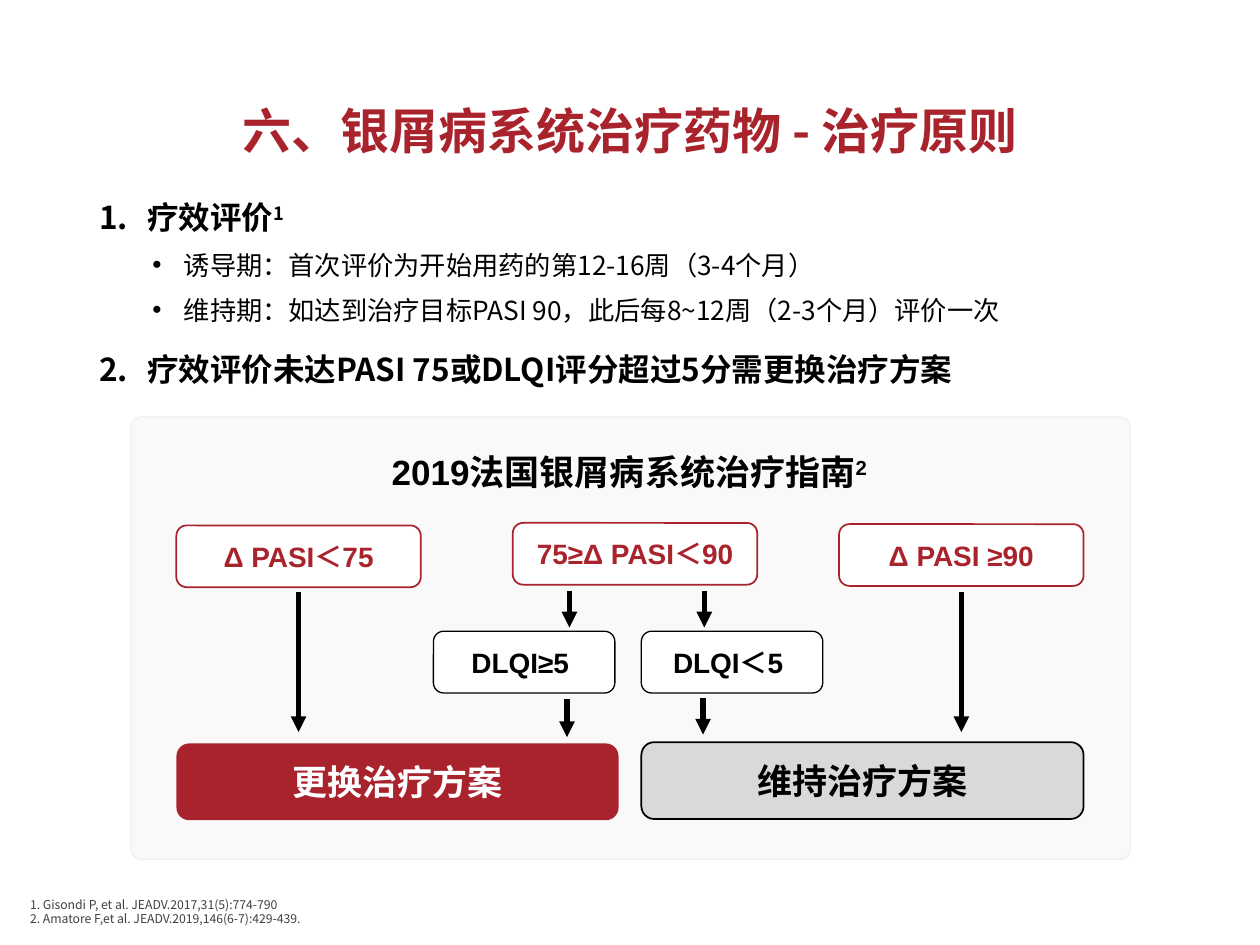
from dataclasses import dataclass
from typing import Optional

from lxml import etree
from pptx import Presentation
from pptx.dml.color import RGBColor
from pptx.enum.shapes import MSO_CONNECTOR, MSO_SHAPE
from pptx.enum.text import MSO_ANCHOR, PP_ALIGN
from pptx.oxml.ns import qn
from pptx.util import Inches, Pt

ROUNDED = MSO_SHAPE.ROUNDED_RECTANGLE
STRAIGHT = MSO_CONNECTOR.STRAIGHT
TOP, MIDDLE, BOTTOM = MSO_ANCHOR.TOP, MSO_ANCHOR.MIDDLE, MSO_ANCHOR.BOTTOM
LEFT, CENTER = PP_ALIGN.LEFT, PP_ALIGN.CENTER

COLORS = {
    "red": "A9232D", "black": "000000", "white": "FFFFFF", "panel": "F9F9F9",
    "panel_edge": "F2F2F2", "grey": "D9D9D9", "reference": "404040",
}
SANS = "Noto Sans CJK SC"
ARIAL = "Arial"

WIDTH, HEIGHT = Inches(10), Inches(7.5)
COLUMNS, ROWS = 100, 75


@dataclass
class Area:
    column: float
    row: float
    columns: float
    rows: float


@dataclass
class Style:
    size: float
    color: str = "black"
    bold: bool = True
    latin: str = ARIAL


@dataclass
class Line:
    text: str
    style: Style
    note: str = ""
    align: PP_ALIGN = LEFT
    margin: float = 0
    hanging: float = 0
    bullet: str = ""
    number: int = 0
    before: float = 0
    spacing: float = 1.0


@dataclass
class Box:
    area: Area
    fill: str
    edge: Optional[str] = None
    edge_width: float = 1
    label: Optional[Line] = None
    corner: float = 0.1667


@dataclass
class Arrow:
    column: float
    start: float
    end: float


def across(columns: float) -> int:
    return round(WIDTH * columns / COLUMNS)


def down(rows: float) -> int:
    return round(HEIGHT * rows / ROWS)


def place(area: Area) -> tuple[int, int, int, int]:
    return across(area.column), down(area.row), across(area.columns), down(area.rows)


def rgb(name: str) -> RGBColor:
    return RGBColor.from_string(COLORS[name])


def add_run(paragraph, text: str, style: Style, raised: bool = False) -> None:
    run = paragraph.add_run()
    run.text = text
    formats = {"size": Pt(style.size), "bold": style.bold, "name": style.latin}
    for attribute, value in formats.items():
        setattr(run.font, attribute, value)
    run.font.color.rgb = rgb(style.color)
    properties = run.font._element
    etree.SubElement(properties, qn("a:ea"), typeface=SANS)
    if raised:
        properties.set("baseline", "30000")


def write_line(paragraph, line: Line) -> None:
    properties = paragraph._p.get_or_add_pPr()
    if line.hanging:
        properties.set("marL", str(Inches(line.margin)))
        properties.set("indent", str(-Inches(line.hanging)))
    if line.bullet:
        etree.SubElement(properties, qn("a:buFont"), typeface=ARIAL)
        etree.SubElement(properties, qn("a:buChar"), char=line.bullet)
    elif line.number:
        etree.SubElement(properties, qn("a:buFont"), typeface=SANS)
        etree.SubElement(properties, qn("a:buAutoNum"), type="arabicPeriod", startAt=str(line.number))
    formats = {"alignment": line.align, "line_spacing": line.spacing, "space_before": Pt(line.before)}
    for attribute, value in formats.items():
        setattr(paragraph, attribute, value)
    add_run(paragraph, line.text, line.style)
    if line.note:
        add_run(paragraph, line.note, line.style, raised=True)


def write(frame, lines: list[Line], anchor: MSO_ANCHOR) -> None:
    frame.word_wrap = True
    frame.vertical_anchor = anchor
    for index, line in enumerate(lines):
        write_line(frame.add_paragraph() if index else frame.paragraphs[0], line)


def draw_text(slide, area: Area, lines: list[Line], anchor: MSO_ANCHOR = TOP) -> None:
    write(slide.shapes.add_textbox(*place(area)).text_frame, lines, anchor)


def draw_box(slide, box: Box) -> None:
    shape = slide.shapes.add_shape(ROUNDED, *place(box.area))
    shape.shadow.inherit = False
    shape.adjustments[0] = box.corner
    shape.fill.solid()
    shape.fill.fore_color.rgb = rgb(box.fill)
    if box.edge:
        shape.line.color.rgb = rgb(box.edge)
        shape.line.width = Pt(box.edge_width)
    else:
        shape.line.fill.background()
    if box.label:
        write(shape.text_frame, [box.label], MIDDLE)


def draw_arrow(slide, arrow: Arrow) -> None:
    x = across(arrow.column)
    connector = slide.shapes.add_connector(STRAIGHT, x, down(arrow.start), x, down(arrow.end))
    connector.line.color.rgb = rgb("black")
    connector.line.width = Pt(3)
    etree.SubElement(connector.line._get_or_add_ln(), qn("a:tailEnd"), type="triangle")
    etree.SubElement(connector._element.spPr, qn("a:effectLst"))


def score(column: float, row: float, text: str) -> Box:
    return Box(Area(column, row, 19.4, 4.9), "white", "red", 1, Line(text, Style(16, "red"), align=CENTER))


def quality(column: float, text: str) -> Box:
    return Box(Area(column, 50.1, 14.4, 4.9), "white", "black", 0.75, Line(text, Style(16), align=CENTER))


def outcome(column: float, row: float, text: str, fill: str, color: str, edge: Optional[str] = None) -> Box:
    return Box(Area(column, row, 35.1, 6.1), fill, edge, 1, Line(text, Style(20, color), align=CENTER))


def heading(number: int, text: str, note: str = "", before: float = 0) -> Line:
    return Line(text, Style(18, latin=SANS), note, margin=0.38, hanging=0.38,
                number=number, before=before, spacing=1.25)


def detail(text: str) -> Line:
    return Line(text, Style(15, bold=False, latin=SANS), margin=0.67, hanging=0.25,
                bullet="•", before=3, spacing=1.25)


def reference(text: str) -> Line:
    return Line(text, Style(7, "reference", False, SANS), margin=0.25, hanging=0.25)


PANEL = Box(Area(10.4, 33.1, 79.3, 35.1), "panel", "panel_edge", corner=0.022)
GUIDELINE = Line("2019法国银屑病系统治疗指南", Style(20), "2", CENTER)
FLOW = [
    score(14, 41.7, "Δ PASI＜75"),
    score(40.7, 41.5, "75≥Δ PASI＜90"),
    score(66.6, 41.6, "Δ PASI ≥90"),
    quality(34.4, "DLQI≥5 "),
    quality(50.9, "DLQI＜5 "),
    outcome(14, 59, "更换治疗方案", "red", "white"),
    outcome(50.9, 58.9, "维持治疗方案", "grey", "black", "black"),
]
ARROWS = [
    Arrow(45.2, 46.9, 49.8), Arrow(55.9, 46.9, 49.8),
    Arrow(45, 55.5, 58.5), Arrow(55.8, 55.4, 58.3),
    Arrow(23.7, 47, 58.1), Arrow(76.3, 47, 58.1),
]
TITLE = Line("六、银屑病系统治疗药物 - 治疗原则", Style(28, "red", latin=SANS), align=CENTER, spacing=0.9)
PRINCIPLES = [
    heading(1, "疗效评价", "1"),
    detail("诱导期：首次评价为开始用药的第12-16周（3-4个月）"),
    detail("维持期：如达到治疗目标PASI 90，此后每8~12周（2-3个月）评价一次"),
    heading(2, "疗效评价未达PASI 75或DLQI评分超过5分需更换治疗方案", before=9),
]
REFERENCES = [
    reference("1. Gisondi P, et al. JEADV.2017,31(5):774-790"),
    reference("2. Amatore F,et al. JEADV.2019,146(6-7):429-439."),
]


def main() -> None:
    deck = Presentation()
    deck.slide_width, deck.slide_height = WIDTH, HEIGHT
    slide = deck.slides.add_slide(deck.slide_layouts[6])
    draw_box(slide, PANEL)
    draw_text(slide, Area(27.3, 35.3, 45.3, 4.4), [GUIDELINE])
    for box in FLOW:
        draw_box(slide, box)
    for arrow in ARROWS:
        draw_arrow(slide, arrow)
    draw_text(slide, Area(6.9, 6.8, 86.2, 7.6), [TITLE], MIDDLE)
    draw_text(slide, Area(1.4, 69, 93.8, 5), REFERENCES, BOTTOM)
    draw_text(slide, Area(6.9, 14.5, 86.2, 17.4), PRINCIPLES)
    deck.save("out.pptx")


if __name__ == "__main__":
    main()
